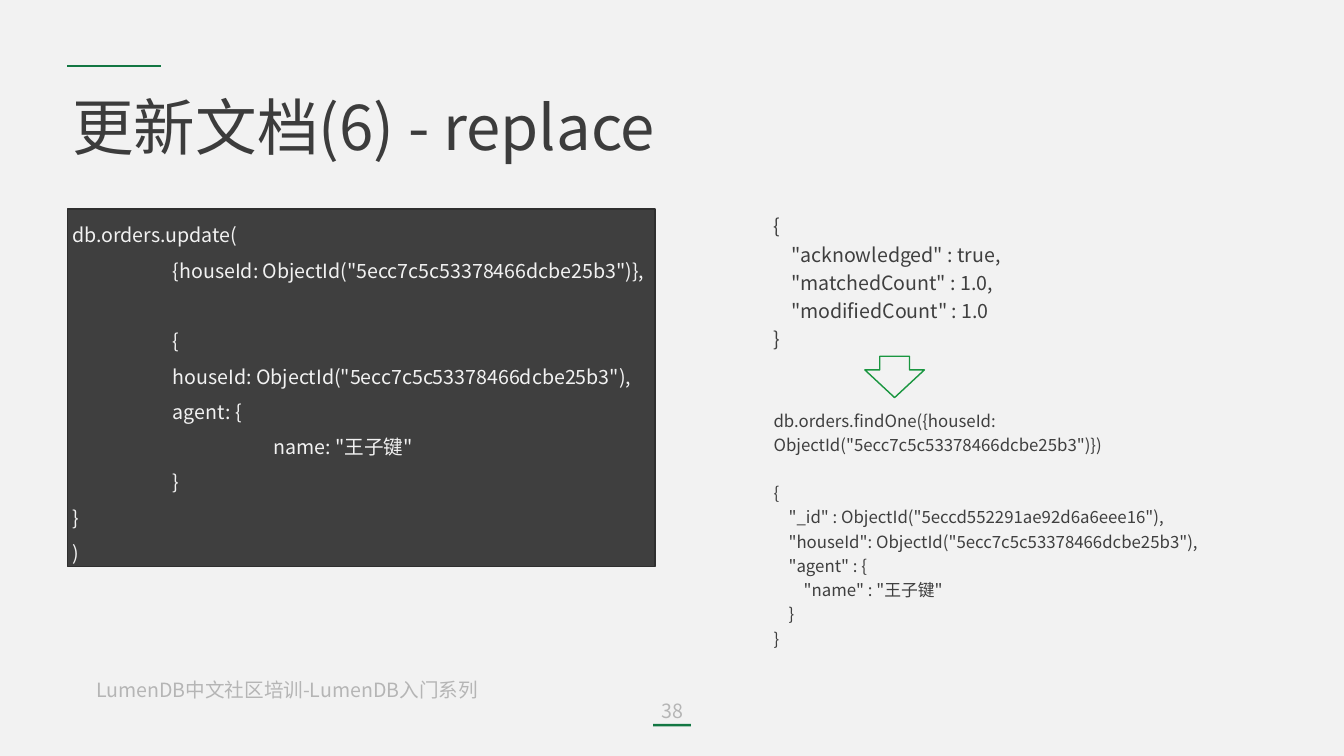
from dataclasses import dataclass

from lxml.etree import SubElement as Sub
from pptx import Presentation
from pptx.dml.color import RGBColor as Rgb
from pptx.enum.shapes import MSO_CONNECTOR as Conn, MSO_SHAPE as Kind
from pptx.enum.text import MSO_ANCHOR as Anchor, MSO_AUTO_SIZE as Fit, PP_ALIGN as Align
from pptx.oxml.ns import qn
from pptx.util import Pt

HUES = {
    "paper": "F2F2F2", "dark": "3F3F3F", "edge": "2F2F2F", "title": "3C3C3C",
    "pale": "B5B5B5", "green": "137743", "arrow": "1A9640",
}
SANS, TRAD = "Noto Sans CJK SC", "Noto Sans CJK TC"
TAB = 144
LEFT, RIGHT = 96, 1098

UPDATE = """db.orders.update(
\t{houseId: ObjectId("5ecc7c5c53378466dcbe25b3")},

\t{
\thouseId: ObjectId("5ecc7c5c53378466dcbe25b3"),
\tagent: {
\t\tname: "王子键"
\t}
}
)"""
RESULT = """{
    "acknowledged" : true,
    "matchedCount" : 1.0,
    "modifiedCount" : 1.0
}"""
FOUND = """db.orders.findOne({houseId: \tObjectId("5ecc7c5c53378466dcbe25b3")})

{
    "_id" : ObjectId("5eccd552291ae92d6a6eee16"),
    "houseId": ObjectId("5ecc7c5c53378466dcbe25b3"),
    "agent" : {
        "name" : "王子键"
    }
}"""


@dataclass
class Box:
    at: tuple[float, float, float, float]
    text: str
    size: float
    hue: str
    lead: float = 1
    face: str = SANS
    align: Align = Align.LEFT
    fill: str = ""


BOXES = [
    Box((130.4, 964.8, 630, 41), "LumenDB中文社区培训-LumenDB入门系列", 28, "pale"),
    Box((902, 995, 116.6, 41), "38", 28, "pale", face=TRAD, align=Align.CENTER),
    Box((LEFT, 298.8, 840, 510.5), UPDATE, 28, "paper", 1.5, fill="dark"),
    Box((RIGHT, 296, 461, 207.4), RESULT, 28, "dark", 1.2),
    Box((RIGHT, 576.7, 689, 352.8), FOUND, 24, "dark", 1.2),
]


def hue(name: str) -> Rgb:
    return Rgb.from_string(HUES[name])


def put(thing, **vals) -> None:
    """Set each given attribute on the thing."""
    for key, val in vals.items():
        setattr(thing, key, val)


def style(run, size: float, tint: str, face: str) -> None:
    put(run.font, size=Pt(size), name=face, bold=False)
    run.font.color.rgb = hue(tint)
    Sub(run.font._element, qn("a:ea"), typeface=face)


def add_tabs(para) -> None:
    stops = Sub(para._p.get_or_add_pPr(), qn("a:tabLst"))
    for step in (1, 2):
        Sub(stops, qn("a:tab"), pos=str(int(Pt(TAB * step))), algn="l")


def draw_shape(slide, kind: Kind, at: tuple, fill: str, line: str = ""):
    shape = slide.shapes.add_shape(kind, *map(Pt, at))
    shape.shadow.inherit = False
    shape.fill.solid()
    shape.fill.fore_color.rgb = hue(fill)
    if line:
        shape.line.color.rgb = hue(line)
        shape.line.width = Pt(2)
    else:
        shape.line.fill.background()
    return shape


def draw_box(slide, box: Box) -> None:
    """Draw the text at a fixed pitch; an empty line becomes space before the next."""
    if box.fill:
        shape = draw_shape(slide, Kind.RECTANGLE, box.at, box.fill, "edge")
    else:
        shape = slide.shapes.add_textbox(*map(Pt, box.at))
    frame = shape.text_frame
    put(frame, word_wrap=True, auto_size=Fit.NONE, vertical_anchor=Anchor.TOP)
    pitch = Pt(round(box.size * 1.2 * box.lead, 1))
    para, gap = frame.paragraphs[0], False
    for num, text in enumerate(box.text.split("\n")):
        if not text:
            gap = True
            continue
        if num:
            para = frame.add_paragraph()
        if "\t" in text:
            add_tabs(para)
        put(para, alignment=box.align, line_spacing=pitch)
        if gap:
            para.space_before = pitch
            gap = False
        run = para.add_run()
        run.text = text
        style(run, box.size, box.hue, box.face)


def draw_title(slide, text: str) -> None:
    title = slide.shapes.title
    put(title, left=Pt(LEFT), top=Pt(110.9), width=Pt(1728), height=Pt(136.8))
    frame = title.text_frame
    put(frame, word_wrap=True, auto_size=Fit.NONE, vertical_anchor=Anchor.MIDDLE)
    para = frame.paragraphs[0]
    para.alignment = Align.LEFT
    run = para.add_run()
    run.text = text
    style(run, 88, "title", SANS)


def draw_rule(slide, left: float, top: float, width: float) -> None:
    rule = slide.shapes.add_connector(
        Conn.STRAIGHT, *map(Pt, (left, top, left + width, top)))
    rule.line.color.rgb = hue("green")
    rule.line.width = Pt(3.25)
    Sub(rule._element.spPr, qn("a:effectLst"))


def main() -> None:
    deck = Presentation()
    put(deck, slide_width=Pt(1920), slide_height=Pt(1080))
    slide = deck.slides.add_slide(deck.slide_layouts[5])
    slide.background.fill.solid()
    slide.background.fill.fore_color.rgb = hue("paper")
    draw_rule(slide, LEFT, 94.3, 134)
    draw_title(slide, "更新文档(6) - replace")
    draw_shape(slide, Kind.RECTANGLE, (933, 1034, 54, 3.6), "green")
    for box in BOXES:
        draw_box(slide, box)
    arrow = draw_shape(slide, Kind.DOWN_ARROW, (1235.5, 509, 85, 59), "paper", "arrow")
    arrow.adjustments[0] = 0.5
    arrow.adjustments[1] = 0.67
    deck.save("out.pptx")


if __name__ == "__main__":
    main()
